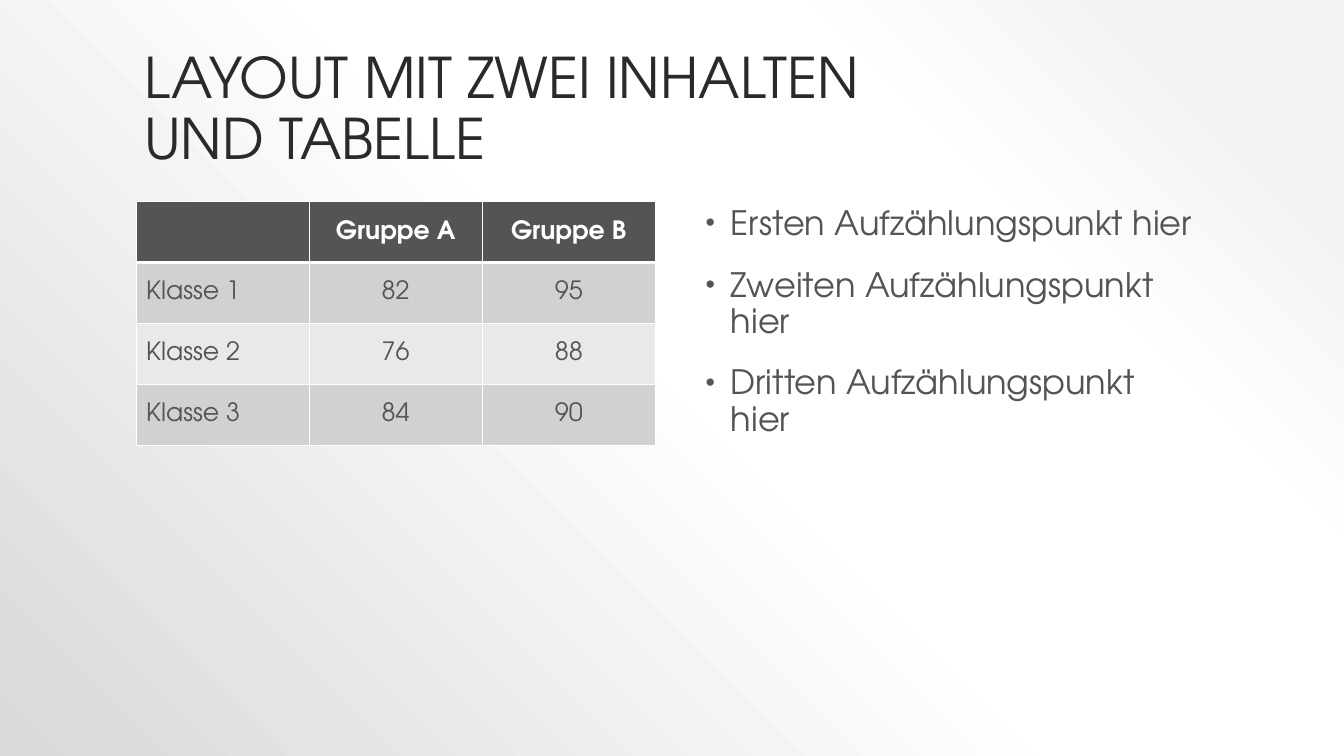
"""Build a slide with a title, a table of class results and a bullet list."""
from pptx import Presentation
from pptx.dml.color import RGBColor
from pptx.enum.text import MSO_ANCHOR as Anchor, MSO_AUTO_SIZE as AutoSize, PP_ALIGN as Align
from pptx.oxml import parse_xml
from pptx.oxml.ns import nsdecls
from pptx.util import Inches, Pt

TITLE = "LAYOUT MIT ZWEI INHALTEN \vUND TABELLE"
ROWS = [
    ("", "Gruppe A", "Gruppe B"),
    ("Klasse 1", "82", "95"),
    ("Klasse 2", "76", "88"),
    ("Klasse 3", "84", "90"),
]
BULLETS = [
    "Ersten Aufzählungspunkt hier",
    "Zweiten Aufzählungspunkt hier",
    "Dritten Aufzählungspunkt hier",
]
FONT = "TeX Gyre Adventor"
COLORS = {
    "title": "2A2A2A",
    "text": "545454",
    "white": "FFFFFF",
    "odd": "D1D1D1",
    "even": "E9E9E9",
}
BACKGROUND_STOPS = [(10, "F2F2F2"), (28, "FFFFFF"), (48, "FFFFFF"), (100, "D9D9D9")]
TITLE_BOX = (1.33, 0.3, 10.67, 1.45)
TABLE_BOX = (1.35, 2, 5.15, 2.42)
BULLET_BOX = (6.85, 2, 5.15, 4.75)


def color(name):
    return RGBColor.from_string(COLORS[name])


def style(para, size, color_name, bold=False):
    para.font.name = FONT
    para.font.size = Pt(size)
    para.font.bold = bold
    para.font.color.rgb = color(color_name)


def paint_background(page):
    stops = "".join(
        f'<a:gs pos="{place * 1000}"><a:srgbClr val="{shade}"/></a:gs>'
        for place, shade in BACKGROUND_STOPS
    )
    page.element.cSld.insert(0, parse_xml(
        f'<p:bg {nsdecls("p", "a")}><p:bgPr><a:gradFill rotWithShape="1">'
        f'<a:gsLst>{stops}</a:gsLst><a:path path="circle">'
        '<a:fillToRect l="100000" b="100000"/></a:path></a:gradFill>'
        '<a:effectLst/></p:bgPr></p:bg>'
    ))


def add_title(page):
    title = page.shapes.title
    title.left, title.top, title.width, title.height = map(Inches, TITLE_BOX)
    frame = title.text_frame
    frame.text = TITLE
    frame.auto_size = AutoSize.NONE
    frame.vertical_anchor = Anchor.BOTTOM
    para = frame.paragraphs[0]
    para.alignment = Align.LEFT
    para.line_spacing = 0.9
    style(para, 40, "title")


def add_borders(cell, row):
    widths = {"L": 1, "R": 1, "T": 3 if row == 1 else 1, "B": 3 if row == 0 else 1}
    properties = cell._tc.get_or_add_tcPr()
    for side, width in widths.items():
        properties.append(parse_xml(
            f'<a:ln{side} {nsdecls("a")} w="{Pt(width)}"><a:solidFill>'
            f'<a:srgbClr val="{COLORS["white"]}"/></a:solidFill></a:ln{side}>'
        ))


def add_results(page):
    box = map(Inches, TABLE_BOX)
    table = page.shapes.add_table(len(ROWS), len(ROWS[0]), *box).table
    for row, values in enumerate(ROWS):
        header = row == 0
        fill = "text" if header else "odd" if row % 2 else "even"
        for column, value in enumerate(values):
            cell = table.cell(row, column)
            add_borders(cell, row)
            cell.fill.solid()
            cell.fill.fore_color.rgb = color(fill)
            cell.vertical_anchor = Anchor.MIDDLE
            cell.text = value
            para = cell.text_frame.paragraphs[0]
            para.alignment = Align.CENTER if column else Align.LEFT
            style(para, 18, "white" if header else "text", header)


def add_bullets(page):
    frame = page.shapes.add_textbox(*map(Inches, BULLET_BOX)).text_frame
    frame.word_wrap = True
    frame.text = "\n".join(BULLETS)
    for para in frame.paragraphs:
        para.line_spacing = 0.9
        para.space_before = Pt(18)
        style(para, 24, "text")
        properties = para._p.get_or_add_pPr()
        properties.set("marL", str(Inches(0.3)))
        properties.set("indent", str(Inches(-0.25)))
        for mark in (
            f'<a:buClr {nsdecls("a")}><a:srgbClr val="{COLORS["text"]}"/></a:buClr>',
            f'<a:buSzPct {nsdecls("a")} val="80000"/>',
            f'<a:buFont {nsdecls("a")} typeface="Arial"/>',
            f'<a:buChar {nsdecls("a")} char="•"/>',
        ):
            properties.insert_element_before(parse_xml(mark), "a:tabLst", "a:defRPr", "a:extLst")


def main():
    deck = Presentation()
    deck.slide_width, deck.slide_height = Inches(13.33), Inches(7.5)
    page = deck.slides.add_slide(deck.slide_layouts[5])
    paint_background(page)
    add_title(page)
    add_results(page)
    add_bullets(page)
    deck.save("out.pptx")


if __name__ == "__main__":
    main()
